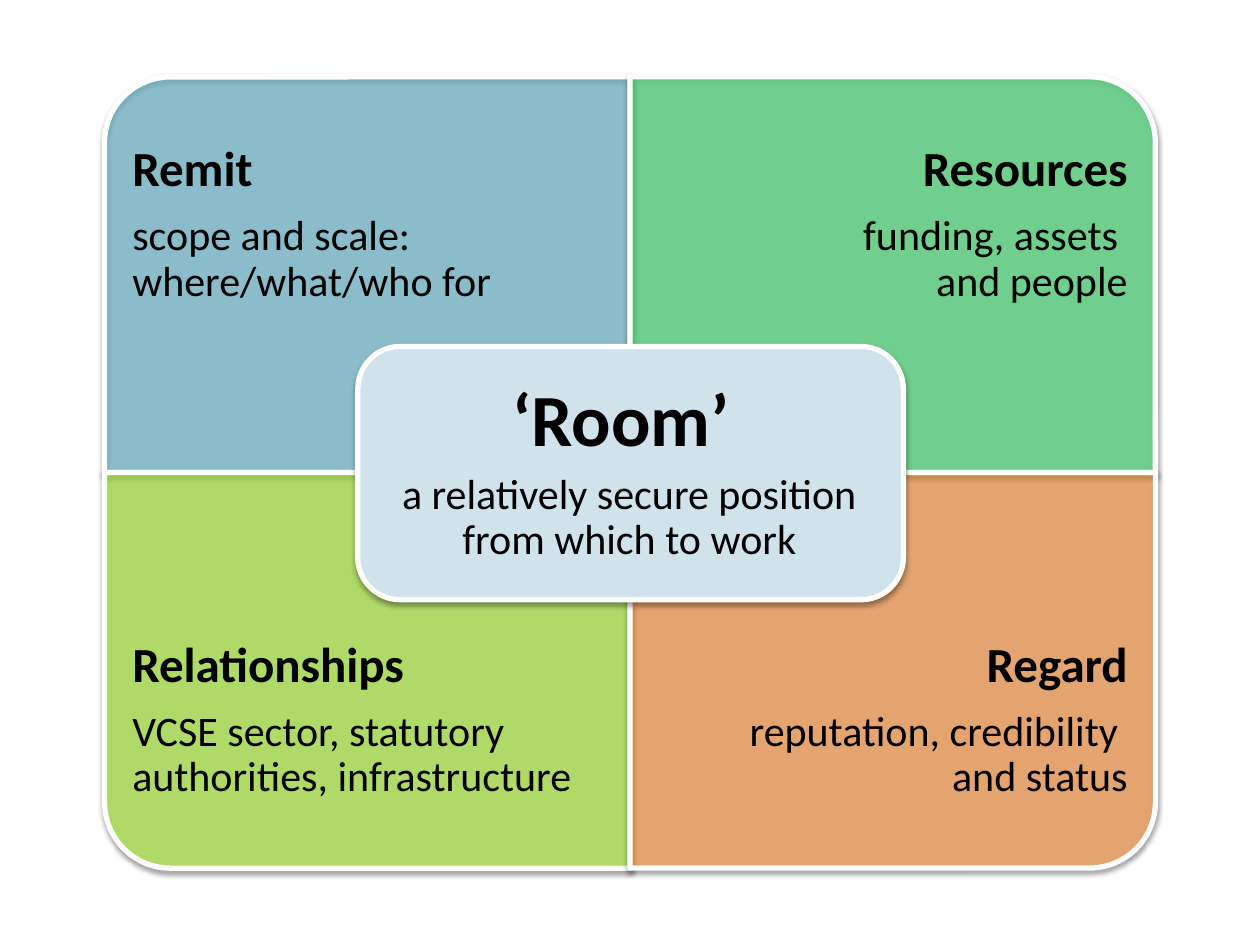
from dataclasses import dataclass

from lxml import etree
from pptx import Presentation
from pptx.dml.color import RGBColor
from pptx.enum.shapes import MSO_SHAPE
from pptx.enum.text import MSO_ANCHOR, PP_ALIGN
from pptx.oxml import parse_xml
from pptx.oxml.ns import qn
from pptx.util import Inches, Pt

LEFT, CENTER, RIGHT = PP_ALIGN.LEFT, PP_ALIGN.CENTER, PP_ALIGN.RIGHT
MIDDLE = MSO_ANCHOR.MIDDLE
ONE_ROUND_CORNER = MSO_SHAPE.ROUND_1_RECTANGLE
ROUNDED = MSO_SHAPE.ROUNDED_RECTANGLE


@dataclass(frozen=True)
class Theme:
    font: str = "Calibri"
    text: str = "000000"
    outline: str = "FFFFFF"
    remit: str = "4BACC6"
    resources: str = "47D872"
    relationships: str = "ACE946"
    regard: str = "F79646"
    room: str = "D0E3EA"
    body_size: int = 24
    heading_size: int = 28
    room_size: int = 42
    outline_width: int = 3


THEME = Theme()
SHADOW = (
    '<a:effectLst xmlns:a="http://schemas.openxmlformats.org/drawingml/2006/main">'
    '<a:outerShdw blurRad="40000" dist="20000" dir="5400000" rotWithShape="0">'
    '<a:srgbClr val="000000"><a:alpha val="38000"/></a:srgbClr>'
    "</a:outerShdw></a:effectLst>"
)


def add_panel(kind, left, top, width, height, color, opacity=100, rotation=0):
    """Add a white-edged panel with a soft shadow; the box is its size before rotation."""
    panel = slide.shapes.add_shape(
        kind, Inches(left), Inches(top), Inches(width), Inches(height))
    panel.rotation = rotation
    panel.fill.solid()
    panel.fill.fore_color.rgb = RGBColor.from_string(color)
    properties = panel._element.spPr
    if opacity < 100:
        fill_color = properties.find(qn("a:solidFill"))[0]
        etree.SubElement(fill_color, qn("a:alpha")).set("val", str(opacity * 1000))
    panel.line.color.rgb = RGBColor.from_string(THEME.outline)
    panel.line.width = Pt(THEME.outline_width)
    properties.append(parse_xml(SHADOW))


def add_label(left, top, width, height, inset, lines, heading_size, align, gaps):
    """Add a bold heading with body lines; gaps are the spaces after heading and body."""
    box = slide.shapes.add_textbox(
        Inches(left), Inches(top), Inches(width), Inches(height))
    frame = box.text_frame
    frame.word_wrap = True
    frame.vertical_anchor = MIDDLE
    frame.margin_left = frame.margin_right = Inches(inset)
    frame.margin_top = frame.margin_bottom = Inches(inset)
    frame.text = "\n".join(lines)
    for index, paragraph in enumerate(frame.paragraphs):
        is_heading = index == 0
        paragraph.alignment = align
        paragraph.line_spacing = 0.9
        paragraph.space_after = Pt(gaps[0] if is_heading else gaps[1])
        font = paragraph.runs[0].font
        font.name = THEME.font
        font.size = Pt(heading_size if is_heading else THEME.body_size)
        font.bold = is_heading
        font.color.rgb = RGBColor.from_string(THEME.text)


presentation = Presentation()
presentation.slide_width = Inches(10)
presentation.slide_height = Inches(7.5)
slide = presentation.slides.add_slide(presentation.slide_layouts[6])

# Four quadrants meet at the slide centre, each rounded at its outer corner
center_x, center_y = 5, 3.75
quadrant_width, quadrant_height = 4.17, 3.14
label_height = 2.35
quadrants = [
    (0, 0, 270, THEME.remit, 50,
     ["Remit", "scope and scale: where/what/who for"]),
    (1, 0, 0, THEME.resources, 65,
     ["Resources", "funding, assets ", "and people"]),
    (0, 1, 180, THEME.relationships, 70,
     ["Relationships", "VCSE sector, statutory authorities, infrastructure"]),
    (1, 1, 90, THEME.regard, 65,
     ["Regard", "reputation, credibility ", "and status"]),
]
for column, row, rotation, color, opacity, lines in quadrants:
    left = center_x + (column - 1) * quadrant_width
    top = center_y + (row - 1) * quadrant_height
    width, height = quadrant_width, quadrant_height
    if rotation in (90, 270):
        width, height = height, width
    add_panel(ONE_ROUND_CORNER,
              left + (quadrant_width - width) / 2, top + (quadrant_height - height) / 2,
              width, height, color, opacity, rotation)
    label_top = top + row * (quadrant_height - label_height)
    add_label(left, label_top, quadrant_width, label_height, 0.22, lines,
              THEME.heading_size, RIGHT if column else LEFT, (9.8, 0))

# Central 'Room' panel
add_panel(ROUNDED, 2.84, 2.75, 4.33, 2.01, THEME.room)
add_label(2.93, 2.85, 4.13, 1.81, 0.17,
          ["‘Room’ ", "a relatively secure position from which to work"],
          THEME.room_size, CENTER, (6, 6))

presentation.save("out.pptx")
